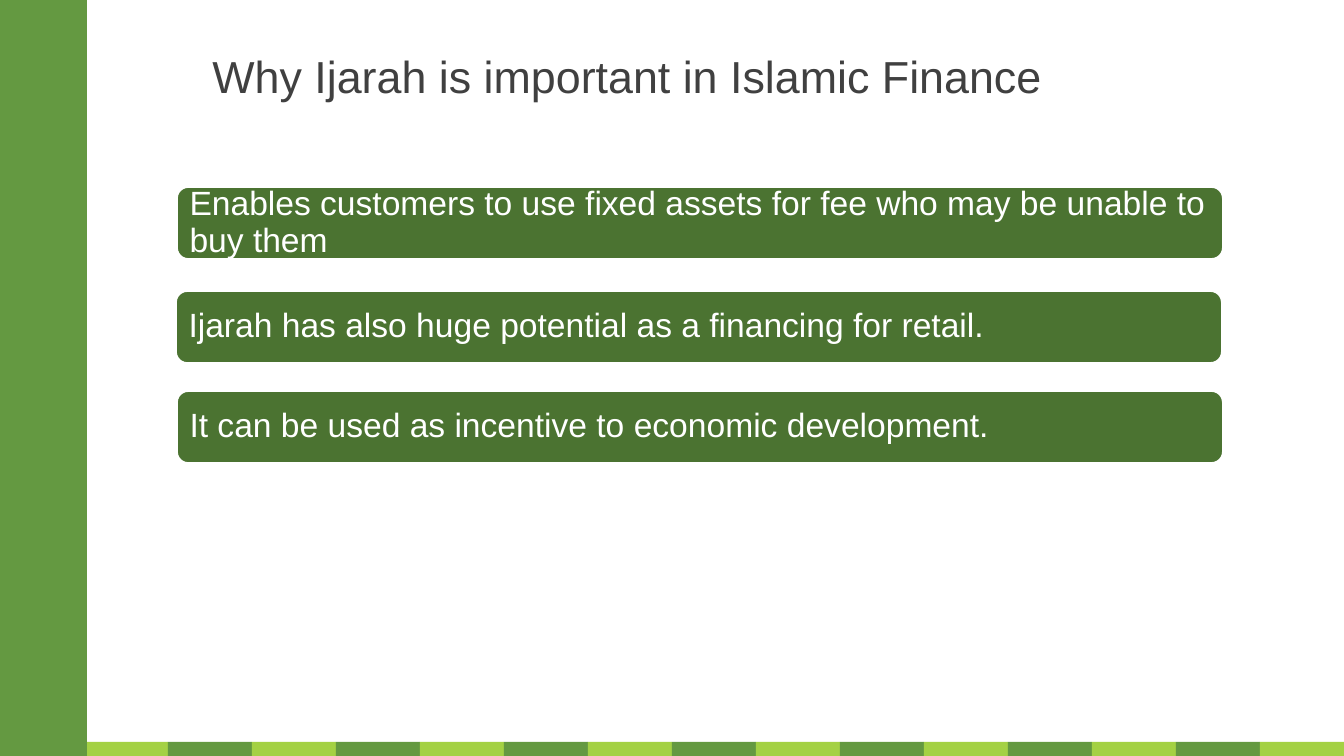
"""Build the slide on why Ijarah is important in Islamic finance."""
from pptx import Presentation
from pptx.dml.color import RGBColor as RGB
from pptx.enum.shapes import MSO_SHAPE as Kind
from pptx.enum.text import MSO_ANCHOR as Anchor, PP_ALIGN as Align
from pptx.util import Inches, Pt

theme = {
    "font": "Arial",
    "green": RGB.from_string("649941"),
    "lime": RGB.from_string("A4D144"),
    "dark": RGB.from_string("4B7331"),
    "white": RGB.from_string("FFFFFF"),
    "gray": RGB.from_string("404040"),
    "title": Pt(24),
    "body": Pt(18),
    "edge": Pt(2),
}
SCALE = Inches(10) / 1344


def px(*nums):
    return [round(num * SCALE) for num in nums]


def add_box(kind, area, fill):
    box = slide.shapes.add_shape(kind, *px(*area))
    box.shadow.inherit = False
    box.fill.solid()
    box.fill.fore_color.rgb = fill
    box.line.fill.background()
    return box


def add_text(shape, text, size, color, align, inset):
    frame = shape.text_frame
    frame.word_wrap = True
    frame.vertical_anchor = Anchor.MIDDLE
    frame.margin_left, frame.margin_right = px(inset, inset)
    frame.margin_top = frame.margin_bottom = 0
    para = frame.paragraphs[0]
    para.alignment = align
    run = para.add_run()
    run.text = text
    run.font.name = theme["font"]
    run.font.size = size
    run.font.color.rgb = color
    return para


deck = Presentation()
deck.slide_width, deck.slide_height = px(1344, 756)
slide = deck.slides.add_slide(deck.slide_layouts[6])

for i in range(16):
    add_box(Kind.RECTANGLE, (i * 84, 742, 84, 14), theme["lime" if i % 2 else "green"])

title = slide.shapes.add_textbox(*px(0, 50, 1254, 52))
add_text(title, "Why Ijarah is important in Islamic Finance",
         theme["title"], theme["gray"], Align.CENTER, 13)

add_box(Kind.RECTANGLE, (0, 0, 87, 756), theme["green"])

reasons = [
    (176, 186, "Enables customers to use fixed assets for fee who may be unable to buy them"),
    (175, 290, "Ijarah has also huge potential as a financing for retail."),
    (176, 390, "It can be used as incentive to economic development."),
]
for left, top, text in reasons:
    card = add_box(Kind.ROUNDED_RECTANGLE, (left, top, 1048, 74), theme["dark"])
    card.line.color.rgb = theme["white"]
    card.line.width = theme["edge"]
    para = add_text(card, text, theme["body"], theme["white"], Align.LEFT, 10)
    para.line_spacing = 0.9

deck.save("out.pptx")
